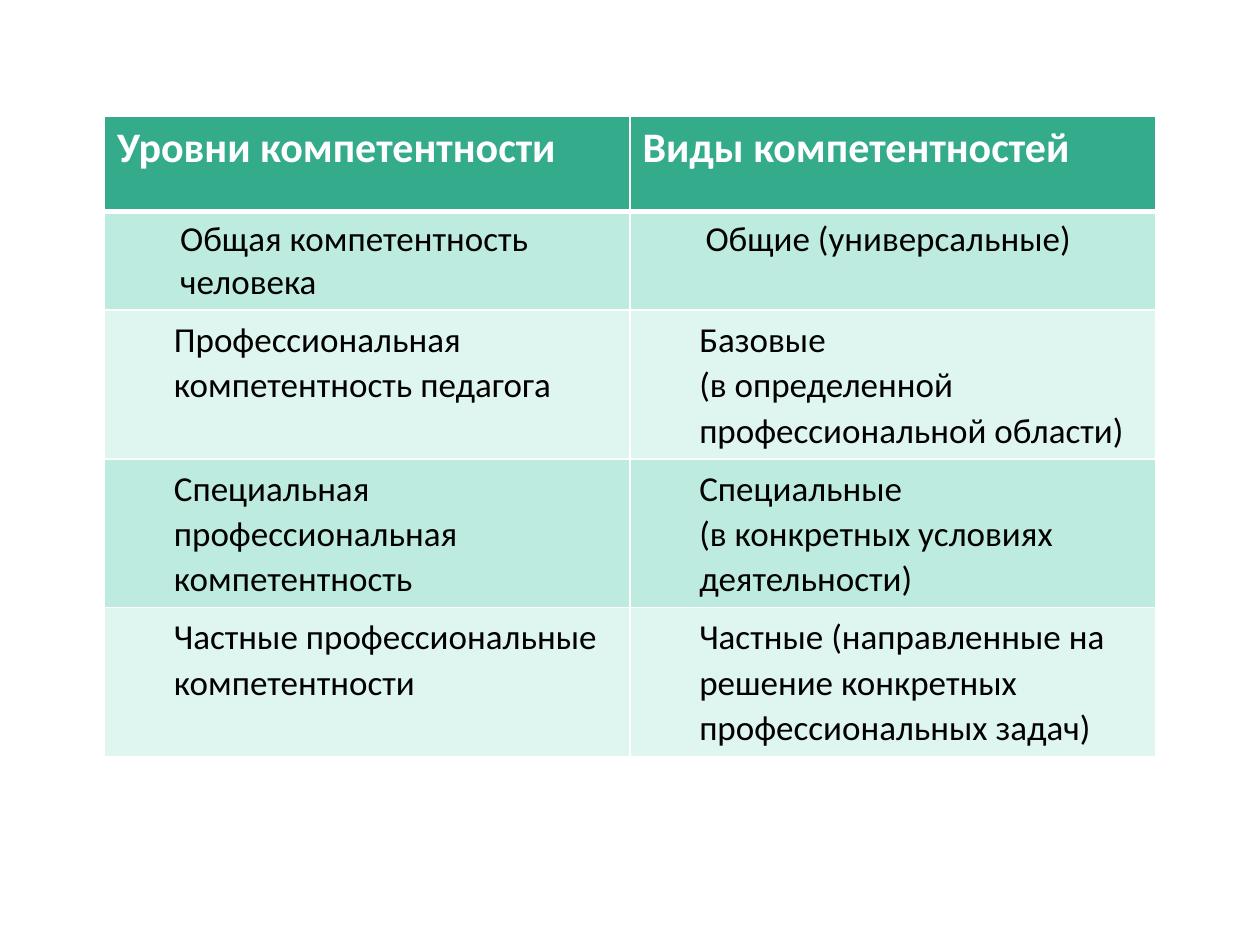
import dataclasses

import lxml.etree
import pptx
import pptx.dml.color
import pptx.oxml.ns
import pptx.util

Inches = pptx.util.Inches
Pt = pptx.util.Pt


@dataclasses.dataclass(frozen=True)
class Theme:
    font: str = "Calibri"
    header_size: int = 24
    body_size: int = 20
    header_fill: str = "34AC8B"
    band_fills: tuple = ("BEEBDF", "DFF5EF")
    white: str = "FFFFFF"
    black: str = "000000"
    thin_line: int = 1
    thick_line: int = 3


HEADERS = ("Уровни компетентности", "Виды компетентностей")
BODY_ROWS = (
    (("Общая компетентность человека",), ("Общие (универсальные)",)),
    (
        ("Профессиональная компетентность педагога",),
        ("Базовые", "(в определенной профессиональной области)"),
    ),
    (
        ("Специальная профессиональная компетентность",),
        ("Специальные", "(в конкретных условиях деятельности)"),
    ),
    (
        ("Частные профессиональные компетентности",),
        ("Частные (направленные на решение конкретных профессиональных задач)",),
    ),
)


def rgb(value):
    return pptx.dml.color.RGBColor.from_string(value)


def write_text(para, text, *, font, size, color, bold=False, indent=None, spacing=None):
    if indent is not None:
        para.level = 1
        properties = para._p.get_or_add_pPr()
        properties.set("marL", str(Inches(indent)))
        properties.set("indent", "0")
    if spacing is not None:
        para.line_spacing = spacing
    span = para.add_run()
    span.text = text
    span.font.name = font
    span.font.size = Pt(size)
    span.font.bold = bold
    span.font.color.rgb = rgb(color)


class SlideBuilder:
    def __init__(self, page, theme):
        self.page = page
        self.theme = theme

    def borders(self, cell, top, bottom):
        qn = pptx.oxml.ns.qn
        properties = cell._tc.get_or_add_tcPr()
        thin = self.theme.thin_line
        for side, width in (("L", thin), ("R", thin), ("T", top), ("B", bottom)):
            line = lxml.etree.SubElement(properties, qn(f"a:ln{side}"), w=str(Pt(width)))
            fill = lxml.etree.SubElement(line, qn("a:solidFill"))
            lxml.etree.SubElement(fill, qn("a:srgbClr"), val=self.theme.white)

    def cell(self, cell, lines, fill, *, top, bottom, inset=None, **text_format):
        self.borders(cell, top, bottom)
        cell.fill.solid()
        cell.fill.fore_color.rgb = rgb(fill)
        if inset is not None:
            cell.margin_left = cell.margin_right = Inches(inset)
            cell.margin_top = cell.margin_bottom = Inches(inset)
        frame = cell.text_frame
        for index, text in enumerate(lines):
            para = frame.add_paragraph() if index else frame.paragraphs[0]
            write_text(para, text, font=self.theme.font, **text_format)

    def table(self, headers, body_rows, left, top, width, height, row_height):
        theme = self.theme
        frame = self.page.shapes.add_table(
            len(body_rows) + 1, len(headers),
            Inches(left), Inches(top), Inches(width), Inches(height),
        )
        table = frame.table
        for row in table.rows:
            row.height = Inches(row_height)
        frame.height = Inches(height)
        for column, text in enumerate(headers):
            self.cell(
                table.cell(0, column), (text,), theme.header_fill,
                top=theme.thin_line, bottom=theme.thick_line,
                size=theme.header_size, color=theme.white, bold=True,
            )
        for number, row in enumerate(body_rows):
            first = number == 0
            for column, lines in enumerate(row):
                self.cell(
                    table.cell(number + 1, column), lines,
                    theme.band_fills[number % 2],
                    top=theme.thick_line if first else theme.thin_line,
                    bottom=theme.thin_line,
                    inset=None if first else 0.05,
                    size=theme.body_size, color=theme.black, indent=0.5,
                    spacing=None if first else 1.06,
                )


def main():
    deck = pptx.Presentation()
    deck.slide_width = Inches(10)
    deck.slide_height = Inches(7.5)
    page = deck.slides.add_slide(deck.slide_layouts[6])
    builder = SlideBuilder(page, Theme())
    builder.table(
        HEADERS, BODY_ROWS,
        left=0.83, top=0.92, width=8.34, height=4.97, row_height=0.76,
    )
    deck.save("out.pptx")


if __name__ == "__main__":
    main()
